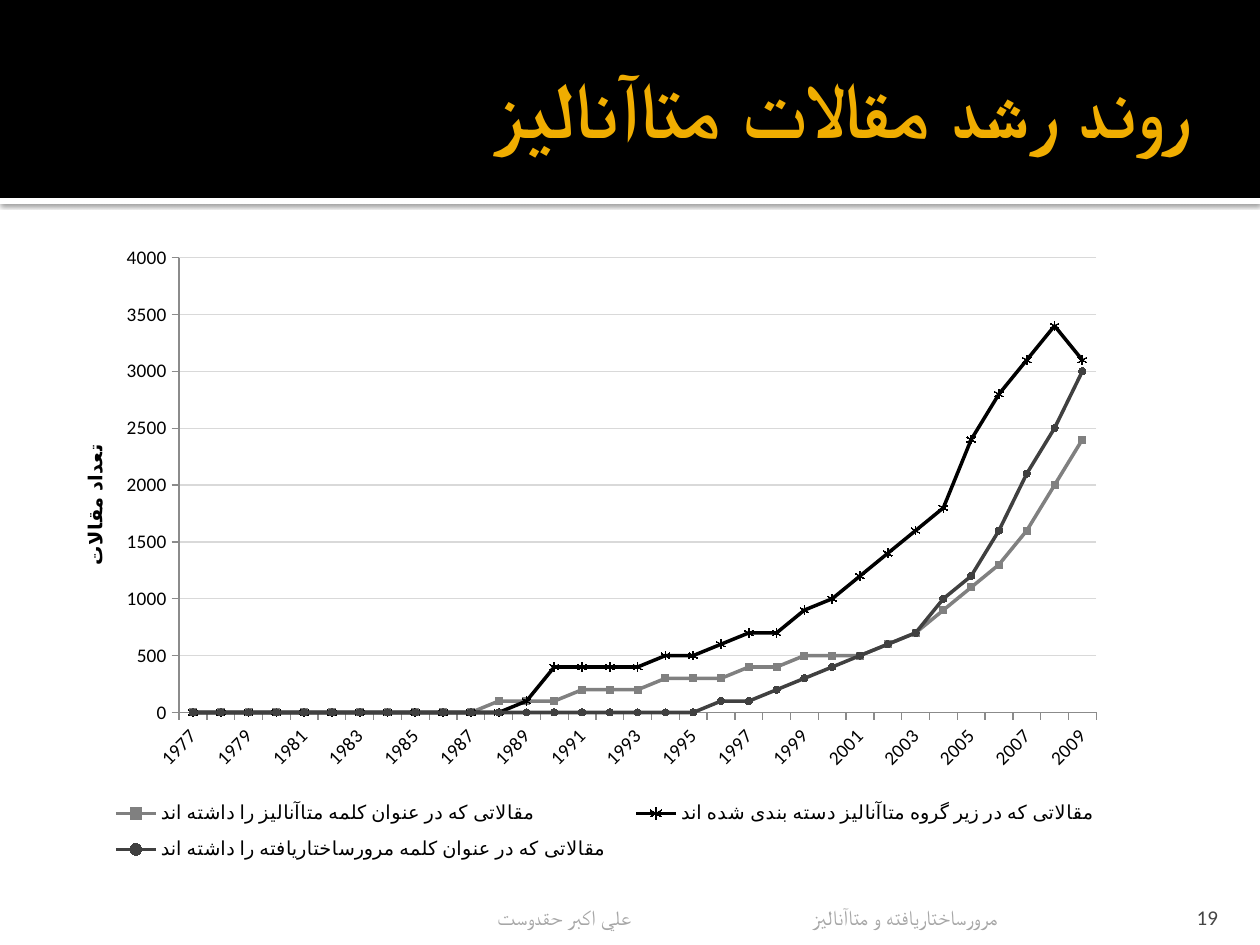
"""Build the slide on the growth of meta-analysis articles."""
from lxml import etree
from pptx import Presentation
from pptx import util as u
from pptx.chart.data import CategoryChartData
from pptx.dml.color import RGBColor
from pptx.enum import chart as ch, shapes, text
from pptx.oxml import parse_xml
from pptx.oxml.ns import nsdecls, qn

TITLE = "روند رشد مقالات متاآناليز"
FOOTER = "علي اكبر حقدوست\t\t\tمرورساختاريافته و متاآناليز"
PAGE = "19"
AXIS_TITLE = "تعداد مقالات"
YEARS = [str(year) for year in range(1977, 2010)]
MARK = ch.XL_MARKER_STYLE
TRENDS = [
    ("مقالاتی که در عنوان کلمه متاآنالیز را داشته اند", "808080", MARK.SQUARE, 4,
     [0] * 11 + [100, 100, 100, 200, 200, 200, 300, 300, 300, 400, 400, 500, 500,
                 500, 600, 700, 900, 1100, 1300, 1600, 2000, 2400]),
    ("مقالاتی که در زیر گروه متاآنالیز دسته بندی شده اند", "000000", MARK.STAR, 5,
     [0] * 12 + [100, 400, 400, 400, 400, 500, 500, 600, 700, 700, 900, 1000,
                 1200, 1400, 1600, 1800, 2400, 2800, 3100, 3400, 3100]),
    ("مقالاتی که در عنوان کلمه مرورساختاریافته را داشته اند", "404040", MARK.CIRCLE, 4,
     [0] * 19 + [100, 100, 200, 300, 400, 500, 600, 700, 1000, 1200, 1600, 2100,
                 2500, 3000]),
]
THEME = {
    "font": "Calibri", "title": "F0AD00", "footer": "A6A6A6", "page": "454545",
    "band": "000000", "strip": "FFFFFF", "ink": "000000", "grid": "D9D9D9",
    "axis": "8B8B8B", "title_pt": 45, "footer_pt": 12, "chart_pt": 11,
}
BANDS = [("strip", (0, 198, 1260, 6)), ("band", (0, 0, 1260, 198))]
TEXTS = [
    (TITLE, "title", "title_pt", (63, 21, 1134, 173), True,
     {"vertical_anchor": text.MSO_ANCHOR.MIDDLE, "margin_left": 13, "margin_right": 6,
      "margin_top": 6, "margin_bottom": 6}),
    (FOOTER, "footer", "footer_pt", (236, 892, 768, 38), False,
     {"vertical_anchor": text.MSO_ANCHOR.BOTTOM, "margin_left": 6, "margin_right": 6,
      "margin_top": 6, "margin_bottom": 0}),
    (PAGE, "page", "footer_pt", (1130, 892, 101, 38), False,
     {"vertical_anchor": text.MSO_ANCHOR.BOTTOM, "margin_left": 13, "margin_right": 13,
      "margin_top": 6, "margin_bottom": 0}),
]
CHART_BOX = (59, 217, 1092, 679)
PLOT = {"x": 0.11, "y": 0.06, "w": 0.84, "h": 0.67}
LEGEND = {"x": 0.03, "y": 0.84, "w": 0.94, "h": 0.13}
AXIS_TITLE_AT = {"x": 0.02, "y": 0.33}


def px(length):
    return u.Emu(round(length * 914400 / 126))


def box(lengths):
    return [px(length) for length in lengths]


def color(key):
    return RGBColor.from_string(THEME.get(key, key))


def assign(target, values):
    for name, value in values.items():
        setattr(target, name, value)


def style(font, size, ink, bold=False):
    assign(font, {"name": THEME["font"], "size": u.Pt(THEME[size]), "bold": bold})
    font.color.rgb = color(ink)


def stroke(line, ink, width):
    line.color.rgb = color(ink)
    line.width = u.Pt(width)


def layout(places, inner=False):
    target = '<c:layoutTarget val="inner"/>' if inner else ""
    modes = "".join(f'<c:{key}Mode val="edge"/>' for key in "xy")
    sizes = "".join(f'<c:{key} val="{value}"/>' for key, value in places.items())
    return parse_xml(f'<c:layout {nsdecls("c")}><c:manualLayout>{target}{modes}{sizes}'
                     '</c:manualLayout></c:layout>')


def place(element, after, places, inner=False):
    for old in element.findall(qn("c:layout")):
        element.remove(old)
    anchor = element.find(qn(after)) if after else None
    position = 0 if anchor is None else element.index(anchor) + 1
    element.insert(position, layout(places, inner))


def add_band(slide, key, area):
    band = slide.shapes.add_shape(shapes.MSO_SHAPE.RECTANGLE, *box(area))
    band.fill.solid()
    band.fill.fore_color.rgb = color(key)
    band.line.fill.background()
    band.shadow.inherit = False
    if key == "strip":
        effects = band._element.spPr.find(qn("a:effectLst"))
        shadow = etree.SubElement(effects, qn("a:outerShdw"), blurRad="31750",
                                  dist="10160", dir="5400000", rotWithShape="0")
        ink = etree.SubElement(shadow, qn("a:srgbClr"), val=THEME["ink"])
        etree.SubElement(ink, qn("a:alpha"), val="60000")


def add_text(slide, wording, ink, size, area, heading, frame_format):
    frame = slide.shapes.add_textbox(*box(area)).text_frame
    assign(frame, {name: px(value) if name.startswith("margin") else value
                   for name, value in frame_format.items()})
    frame.word_wrap = True
    paragraph = frame.paragraphs[0]
    paragraph.alignment = text.PP_ALIGN.RIGHT
    if heading:
        paragraph._p.get_or_add_pPr().set("rtl", "1")
    run = paragraph.add_run()
    run.text = wording
    style(run.font, size, ink, heading)


def add_trends(slide):
    data = CategoryChartData()
    data.categories = YEARS
    for name, _, _, _, counts in TRENDS:
        data.add_series(name, counts)
    chart = slide.shapes.add_chart(ch.XL_CHART_TYPE.LINE_MARKERS, *box(CHART_BOX), data).chart
    assign(chart, {"has_title": False, "has_legend": True})
    style(chart.font, "chart_pt", "ink")
    chart.plots[0].vary_by_categories = False
    for series, (_, ink, marker, size, _) in zip(chart.plots[0].series, TRENDS):
        series.smooth = False
        stroke(series.format.line, ink, 2)
        assign(series.marker, {"style": marker, "size": size})
        if marker == MARK.STAR:
            series.marker.format.fill.background()
            stroke(series.marker.format.line, ink, 0.75)
        else:
            series.marker.format.fill.solid()
            series.marker.format.fill.fore_color.rgb = color(ink)
            series.marker.format.line.fill.background()

    years, counts = chart.category_axis, chart.value_axis
    for axis in (years, counts):
        axis.major_tick_mark = ch.XL_TICK_MARK.OUTSIDE
        stroke(axis.format.line, "axis", 0.75)
        style(axis.tick_labels.font, "chart_pt", "ink")
    years._element.find(qn("c:txPr")).find(qn("a:bodyPr")).set("rot", "-2700000")
    assign(counts, {"minimum_scale": 0, "maximum_scale": 4000, "major_unit": 500,
                    "has_major_gridlines": True})
    stroke(counts.major_gridlines.format.line, "grid", 0.75)
    heading = counts.axis_title.text_frame
    heading.text = AXIS_TITLE
    style(heading.paragraphs[0].runs[0].font, "chart_pt", "ink", True)
    assign_rotation = heading._txBody.find(qn("a:bodyPr")).set
    assign_rotation("rot", "-5400000")
    assign_rotation("vert", "horz")

    assign(chart.legend, {"position": ch.XL_LEGEND_POSITION.RIGHT, "include_in_layout": False})
    style(chart.legend.font, "chart_pt", "ink")
    place(chart.legend._element, "c:legendPos", LEGEND)
    place(counts.axis_title._element, "c:tx", AXIS_TITLE_AT)
    place(chart._chartSpace.chart.plotArea, None, PLOT, inner=True)


def main():
    deck = Presentation()
    assign(deck, {"slide_width": px(1260), "slide_height": px(945)})
    slide = deck.slides.add_slide(deck.slide_layouts[6])
    for band in BANDS:
        add_band(slide, *band)
    for passage in TEXTS:
        add_text(slide, *passage)
    add_trends(slide)
    deck.save("out.pptx")


if __name__ == "__main__":
    main()
